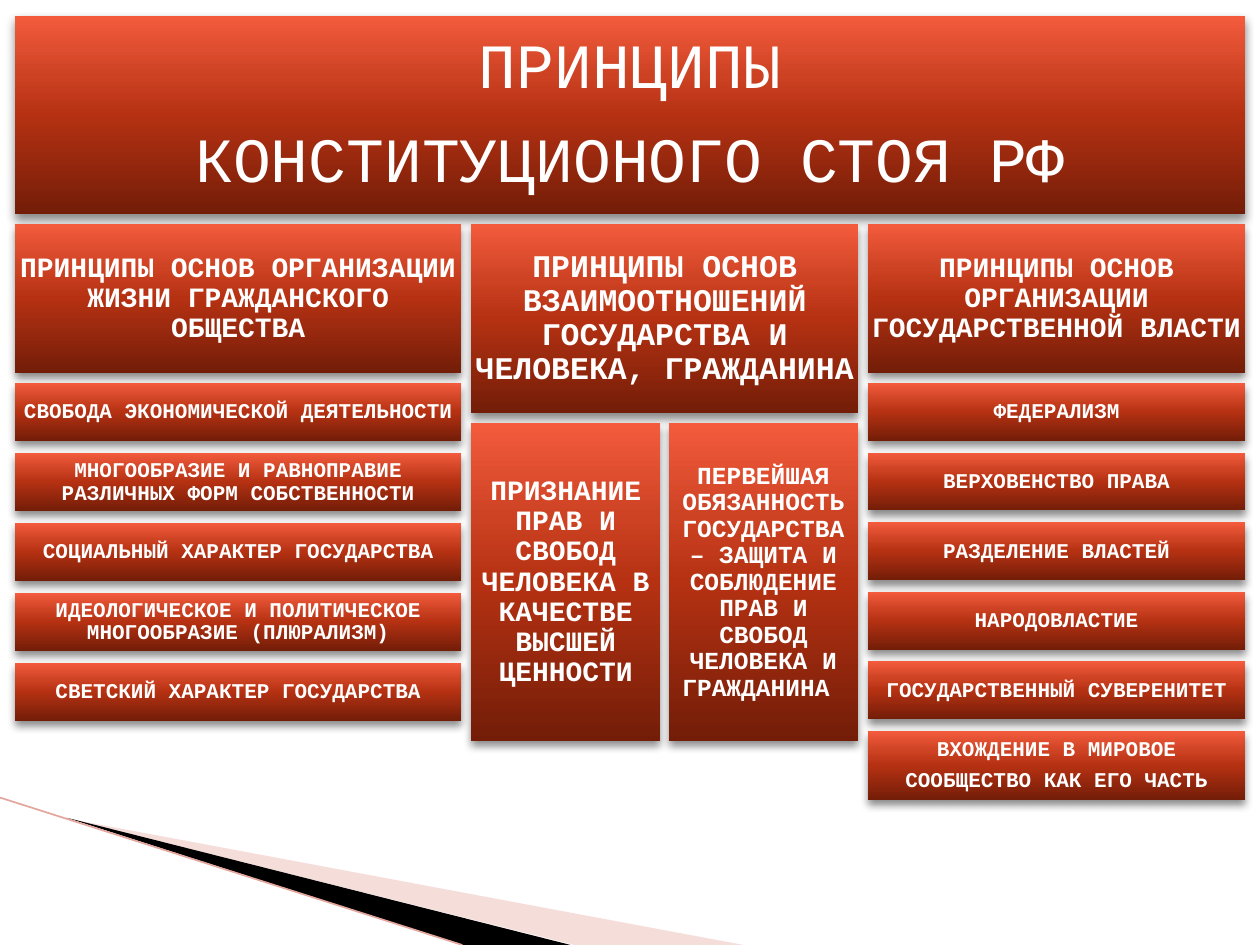
from dataclasses import dataclass

from lxml import etree
from pptx import Presentation
from pptx.dml.color import RGBColor
from pptx.enum import shapes, text
from pptx.oxml import ns
from pptx.util import Inches, Pt


@dataclass(frozen=True)
class Theme:
    font: str = "Courier New"
    text: str = "FFFFFF"
    shadow: str = "000000"
    gradient: tuple = ((0, "731D08"), (50, "B53112"), (70, "CC4223"), (100, "F45B3D"))
    pale_wedge: str = "E7ACA4"
    dark_wedge: str = "000000"
    edge: str = "E3A59C"
    title_size: int = 36
    heading_size: int = 16
    wide_heading_size: int = 18
    item_size: int = 12
    duty_size: int = 14


THEME = Theme()
LEFT, RIGHT = 0.12, 9.88
HEADING_TOP, HEADING_HEIGHT = 1.78, 1.18
ITEM_TOP, ITEM_HEIGHT = 3.04, 0.46
SOCIETY_WIDTH = 3.54
PERSON_LEFT, PERSON_WIDTH = 3.74, 3.07
POWER_LEFT = 6.89
POWER_WIDTH = RIGHT - POWER_LEFT

SOCIETY_ITEMS = [
    "СВОБОДА ЭКОНОМИЧЕСКОЙ ДЕЯТЕЛЬНОСТИ",
    "МНОГООБРАЗИЕ И РАВНОПРАВИЕ РАЗЛИЧНЫХ ФОРМ СОБСТВЕННОСТИ",
    "СОЦИАЛЬНЫЙ ХАРАКТЕР ГОСУДАРСТВА",
    "ИДЕОЛОГИЧЕСКОЕ И ПОЛИТИЧЕСКОЕ МНОГООБРАЗИЕ (ПЛЮРАЛИЗМ)",
    "СВЕТСКИЙ ХАРАКТЕР ГОСУДАРСТВА",
]
POWER_ITEMS = [
    "ФЕДЕРАЛИЗМ",
    "ВЕРХОВЕНСТВО ПРАВА",
    "РАЗДЕЛЕНИЕ ВЛАСТЕЙ",
    "НАРОДОВЛАСТИЕ",
    "ГОСУДАРСТВЕННЫЙ СУВЕРЕНИТЕТ",
]


def set_all(target, values):
    for name, value in values.items():
        setattr(target, name, value)


def add_node(parent, tag, **attributes):
    values = {name: str(value) for name, value in attributes.items()}
    return etree.SubElement(parent, ns.qn(tag), values)


def add_color(parent, color, opacity=100):
    node = add_node(parent, "a:srgbClr", val=color)
    if opacity < 100:
        add_node(node, "a:alpha", val=opacity * 1000)


def paint_panel(panel):
    """Give a panel the red vertical gradient and the soft shadow below it."""
    panel.fill.gradient()
    panel.fill.gradient_angle = 90
    panel.line.fill.background()
    properties = panel._element.spPr
    stops = properties.find(".//" + ns.qn("a:gsLst"))
    for stop in list(stops):
        stops.remove(stop)
    for position, color in THEME.gradient:
        add_color(add_node(stops, "a:gs", pos=position * 1000), color)

    panel.shadow.inherit = False
    effects = properties.find(ns.qn("a:effectLst"))
    shadow = add_node(effects, "a:outerShdw", blurRad=Pt(5), dist=Pt(3),
                      dir=90 * 60000, rotWithShape=0)
    add_color(shadow, THEME.shadow, 45)


def write(panel, lines, size, bold=True, inset=0):
    frame = panel.text_frame
    frame.text = "\n".join(lines)
    margin = Inches(inset)
    set_all(frame, {
        "word_wrap": True,
        "auto_size": text.MSO_AUTO_SIZE.NONE,
        "vertical_anchor": text.MSO_ANCHOR.MIDDLE,
        "margin_left": margin, "margin_right": margin,
        "margin_top": margin, "margin_bottom": margin,
    })
    for paragraph in frame.paragraphs:
        set_all(paragraph, {
            "alignment": text.PP_ALIGN.CENTER,
            "line_spacing": 0.9,
            "space_after": Pt(round(0.42 * size, 1)),
        })
        set_all(paragraph.font, {"name": THEME.font, "size": Pt(size), "bold": bold})
        paragraph.font.color.rgb = RGBColor.from_string(THEME.text)


def add_title(slide, lines):
    title = slide.shapes.title
    set_all(title, {"left": Inches(LEFT), "top": Inches(0.13),
                    "width": Inches(RIGHT - LEFT), "height": Inches(1.57)})
    paint_panel(title)
    write(title, lines, THEME.title_size, bold=False, inset=0.01)


def add_panel(slide, left, top, width, height, lines, size):
    panel = slide.shapes.add_shape(shapes.MSO_SHAPE.RECTANGLE, Inches(left),
                                   Inches(top), Inches(width), Inches(height))
    paint_panel(panel)
    write(panel, lines, size)


def add_items(slide, left, width, items, last_top):
    step = (last_top - ITEM_TOP) / (len(items) - 1)
    for row, item in enumerate(items):
        add_panel(slide, left, ITEM_TOP + row * step, width, ITEM_HEIGHT,
                  [item], THEME.item_size)


def add_wedge(slide, corners, color, opacity=100):
    points = [(Inches(x), Inches(y)) for x, y in corners]
    builder = slide.shapes.build_freeform(*points[0])
    builder.add_line_segments(points[1:], close=True)
    wedge = builder.convert_to_shape()
    wedge.shadow.inherit = False
    wedge.line.fill.background()
    wedge.fill.solid()
    wedge.fill.fore_color.rgb = RGBColor.from_string(color)
    if opacity < 100:
        node = wedge._element.spPr.find(ns.qn("a:solidFill"))[0]
        add_node(node, "a:alpha", val=opacity * 1000)


def add_edge(slide, start, end):
    edge = slide.shapes.add_connector(shapes.MSO_CONNECTOR.STRAIGHT,
                                      *map(Inches, start + end))
    edge.line.width = Pt(0.95)
    edge.line.color.rgb = RGBColor.from_string(THEME.edge)
    add_node(edge._element.spPr, "a:effectLst")


def add_corner_ornament(slide):
    add_wedge(slide, [(0.55, 6.5), (5.9, 7.5), (4.56, 7.5)], THEME.pale_wedge, 40)
    add_wedge(slide, [(0.53, 6.49), (4.53, 7.5), (3.67, 7.5)], THEME.dark_wedge)
    add_edge(slide, (0, 6.33), (3.67, 7.5))


def main():
    deck = Presentation()
    set_all(deck, {"slide_width": Inches(10), "slide_height": Inches(7.5)})
    slide = deck.slides.add_slide(deck.slide_layouts[5])

    add_corner_ornament(slide)
    add_title(slide, ["ПРИНЦИПЫ", "КОНСТИТУЦИОНОГО СТОЯ РФ"])

    add_panel(slide, POWER_LEFT, HEADING_TOP, POWER_WIDTH, HEADING_HEIGHT,
              ["ПРИНЦИПЫ ОСНОВ ОРГАНИЗАЦИИ ГОСУДАРСТВЕННОЙ ВЛАСТИ"], THEME.heading_size)
    add_items(slide, POWER_LEFT, POWER_WIDTH, POWER_ITEMS, last_top=5.25)
    add_panel(slide, POWER_LEFT, 5.8, POWER_WIDTH, 0.55,
              ["ВХОЖДЕНИЕ В МИРОВОЕ", "СООБЩЕСТВО КАК ЕГО ЧАСТЬ"], THEME.item_size)

    add_panel(slide, PERSON_LEFT, HEADING_TOP, PERSON_WIDTH, 1.5,
              ["ПРИНЦИПЫ ОСНОВ ВЗАИМООТНОШЕНИЙ ГОСУДАРСТВА И ЧЕЛОВЕКА, ГРАЖДАНИНА"],
              THEME.wide_heading_size)
    duties = [
        ("ПРИЗНАНИЕ ПРАВ И СВОБОД ЧЕЛОВЕКА В КАЧЕСТВЕ ВЫСШЕЙ ЦЕННОСТИ",
         THEME.heading_size),
        ("ПЕРВЕЙШАЯ ОБЯЗАННОСТЬ ГОСУДАРСТВА – ЗАЩИТА И СОБЛЮДЕНИЕ ПРАВ И СВОБОД "
         "ЧЕЛОВЕКА И ГРАЖДАНИНА ", THEME.duty_size),
    ]
    for column, (duty, size) in enumerate(duties):
        add_panel(slide, PERSON_LEFT + column * 1.57, 3.36, 1.5, 2.52, [duty], size)

    add_panel(slide, LEFT, HEADING_TOP, SOCIETY_WIDTH, HEADING_HEIGHT,
              ["ПРИНЦИПЫ ОСНОВ ОРГАНИЗАЦИИ ЖИЗНИ ГРАЖДАНСКОГО ОБЩЕСТВА"],
              THEME.heading_size)
    add_items(slide, LEFT, SOCIETY_WIDTH, SOCIETY_ITEMS, last_top=5.26)

    deck.save("out.pptx")


if __name__ == "__main__":
    main()
